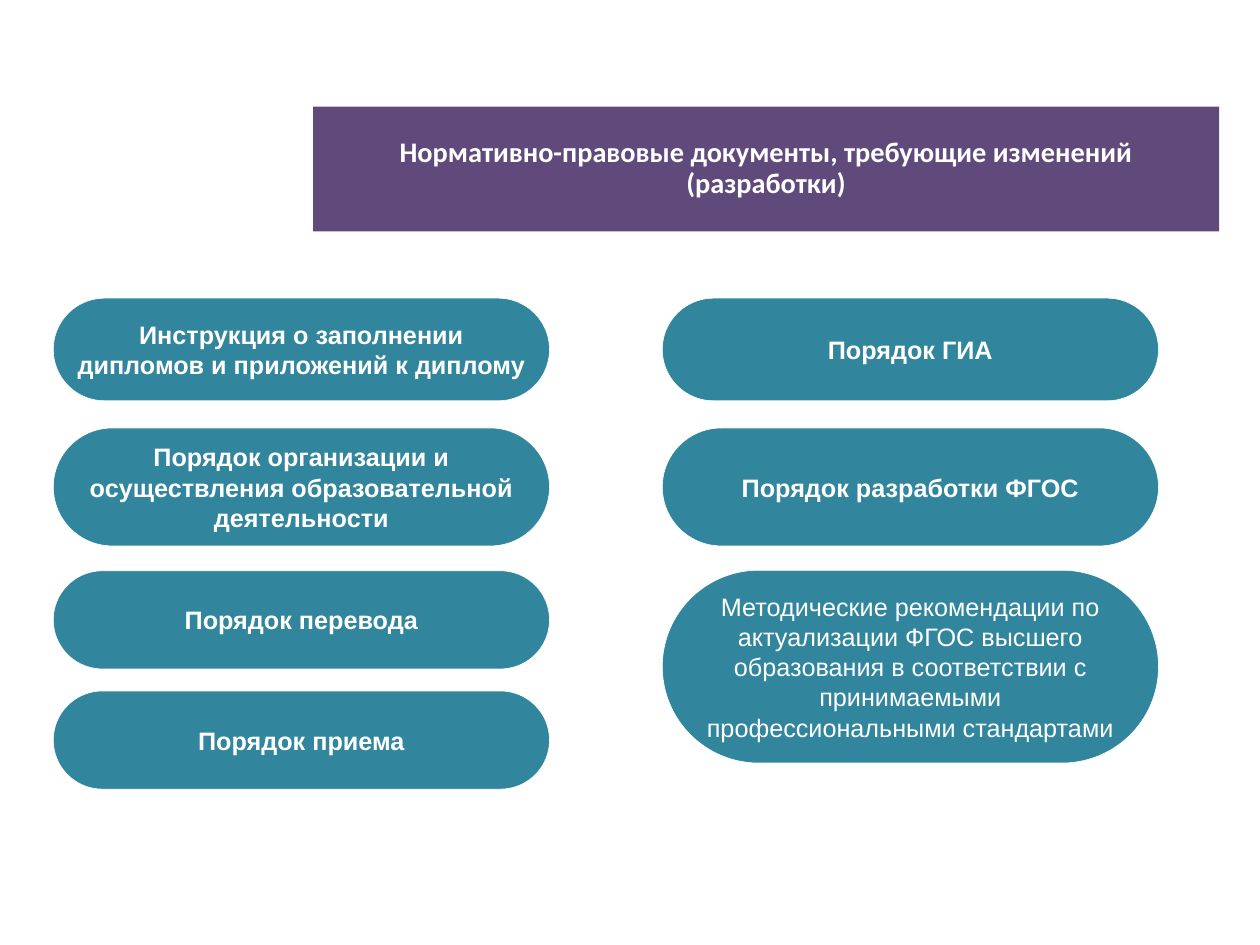
from dataclasses import dataclass

from lxml import etree
from pptx import Presentation
from pptx import util as u
from pptx.dml.color import RGBColor
from pptx.enum import shapes, text
from pptx.oxml import ns

PX = 9144  # EMU in one px, 100 px to the inch


@dataclass(frozen=True)
class Theme:
    white: RGBColor = RGBColor(0xFF, 0xFF, 0xFF)
    purple: RGBColor = RGBColor(0x60, 0x4A, 0x7B)
    teal: RGBColor = RGBColor(0x31, 0x85, 0x9C)
    heading_font: str = "Calibri"
    card_font: str = "Arial"
    heading_size: int = 36
    card_size: int = 32
    outline: float = 0.75


THEME = Theme()

HEADING = "Нормативно-правовые документы, требующие изменений (разработки)"
CARD_WIDTH = 875
LEFT_COLUMN, RIGHT_COLUMN = 94, 1168

# Each column: left edge, then (top, height, wording, bold) for each document
COLUMNS = {
    LEFT_COLUMN: [
        (526, 181, "Инструкция о заполнении дипломов и приложений к диплому", True),
        (755, 208, "Порядок организации и осуществления образовательной деятельности", True),
        (1007, 173, "Порядок перевода", True),
        (1219, 173, "Порядок приема", True),
    ],
    RIGHT_COLUMN: [
        (526, 181, "Порядок ГИА", True),
        (755, 208, "Порядок разработки ФГОС", True),
        (1006, 340, "Методические рекомендации по актуализации ФГОС высшего образования "
                    "в соответствии с принимаемыми профессиональными стандартами", False),
    ],
}


def px(*lengths):
    return [u.Emu(length * PX) for length in lengths]


def write(shape, wording, font, size, bold):
    """Centred white wording in the middle of a pill."""
    frame = shape.text_frame
    frame.text = wording
    frame.word_wrap = True
    frame.auto_size = text.MSO_AUTO_SIZE.NONE
    frame.vertical_anchor = text.MSO_ANCHOR.MIDDLE
    paragraph = frame.paragraphs[0]
    paragraph.alignment = text.PP_ALIGN.CENTER
    for run in paragraph.runs:
        run.font.name = font
        run.font.size = u.Pt(size)
        run.font.bold = bold
        run.font.color.rgb = THEME.white
    return paragraph


def paint(shape, color):
    shape.fill.solid()
    shape.fill.fore_color.rgb = color


def add_heading(slide):
    heading = slide.shapes.title
    heading.left, heading.top, heading.width, heading.height = px(552, 188, 1598, 220)
    # Fully rounded outline for the title placeholder
    outline = etree.SubElement(heading.element.spPr, ns.qn("a:prstGeom"), prst="roundRect")
    adjustments = etree.SubElement(outline, ns.qn("a:avLst"))
    etree.SubElement(adjustments, ns.qn("a:gd"), name="adj", fmla="val 50000")
    paint(heading, THEME.purple)
    paragraph = write(heading, HEADING, THEME.heading_font, THEME.heading_size, True)
    paragraph.line_spacing = 0.9


def add_card(slide, left, top, height, wording, bold):
    card = slide.shapes.add_shape(
        shapes.MSO_SHAPE.ROUNDED_RECTANGLE, *px(left, top, CARD_WIDTH, height))
    card.adjustments[0] = 0.5
    card.shadow.inherit = False
    paint(card, THEME.teal)
    card.line.color.rgb = THEME.white
    card.line.width = u.Pt(THEME.outline)
    write(card, wording, THEME.card_font, THEME.card_size, bold)


def main():
    deck = Presentation()
    deck.slide_width, deck.slide_height = px(2222, 1667)
    slide = deck.slides.add_slide(deck.slide_layouts.get_by_name("Title Only"))

    # Heading
    add_heading(slide)

    # Two columns of documents
    for left, documents in COLUMNS.items():
        for top, height, wording, bold in documents:
            add_card(slide, left, top, height, wording, bold)

    deck.save("out.pptx")


if __name__ == "__main__":
    main()
